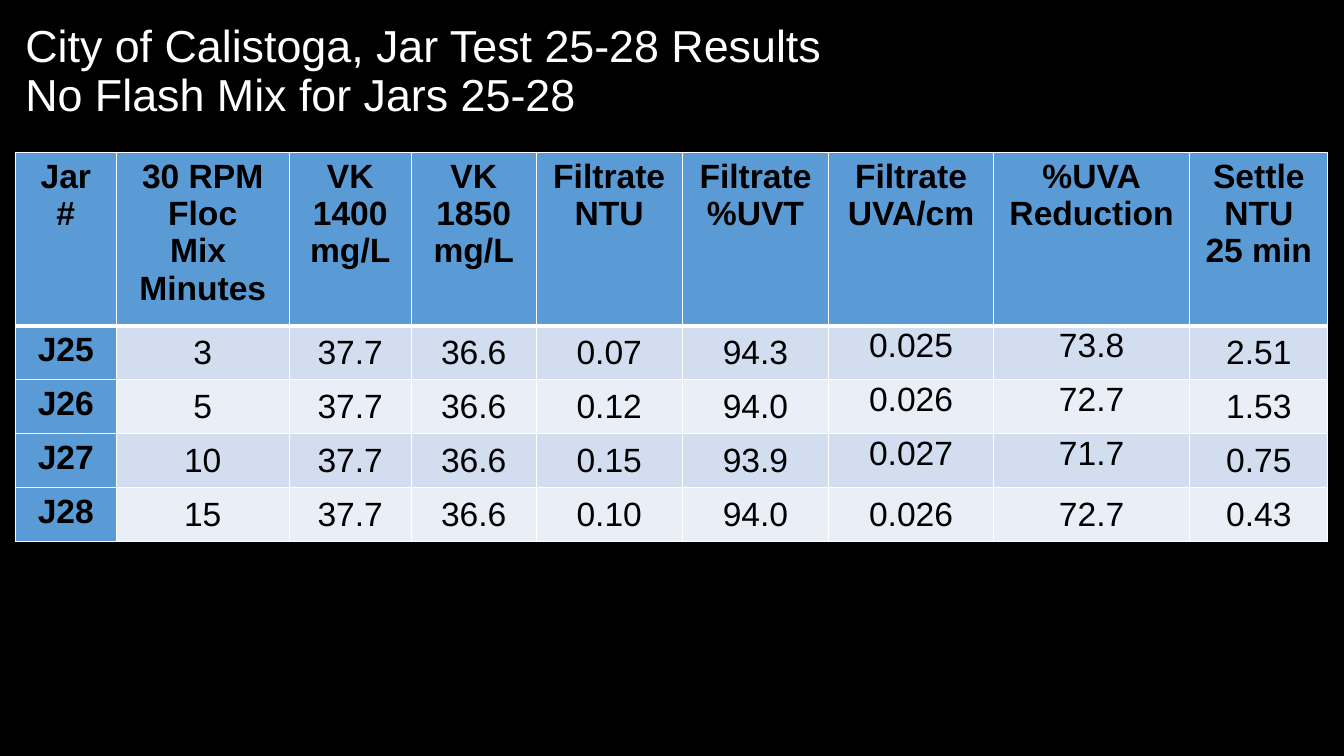
"""Build the jar test results slide with its table."""
from lxml import etree
from pptx import Presentation
from pptx.dml.color import RGBColor
from pptx.enum.text import MSO_ANCHOR, PP_ALIGN
from pptx.oxml.ns import qn
from pptx.util import Pt

TOP, MIDDLE = MSO_ANCHOR.TOP, MSO_ANCHOR.MIDDLE
LEFT, CENTER = PP_ALIGN.LEFT, PP_ALIGN.CENTER
BLUE, BANDS = "5B9BD5", ("D2DEEF", "EAEFF7")
WHITE, BLACK = "FFFFFF", "000000"

COL_WIDTHS = [72, 123.6, 87.2, 89.2, 104.4, 104.6, 117.6, 140.4, 98.4]
HEADER_HEIGHT, ROW_HEIGHT = 123.8, 38.5
ROWS = [
    ["Jar\n#", "30 RPM\nFloc\nMix \nMinutes", "VK\n1400\nmg/L", "VK\n1850\nmg/L",
     "Filtrate\nNTU", "Filtrate\n%UVT", "Filtrate\nUVA/cm", "%UVA\nReduction",
     "Settle\nNTU\n25 min"],
    ["J25", "3", "37.7", "36.6", "0.07", "94.3", "0.025", "73.8", "2.51"],
    ["J26", "5", "37.7", "36.6", "0.12", "94.0", "0.026", "72.7", "1.53"],
    ["J27", "10", "37.7", "36.6", "0.15", "93.9", "0.027", "71.7", "0.75"],
    ["J28", "15", "37.7", "36.6", "0.10", "94.0", "0.026", "72.7", "0.43"],
]


def rgb(value):
    return RGBColor.from_string(value)


def write(tf, text, size=24, color=BLACK, bold=False, align=CENTER, spacing=1.0):
    for i, line in enumerate(text.split("\n")):
        p = tf.paragraphs[0] if i == 0 else tf.add_paragraph()
        p.alignment, p.line_spacing = align, spacing
        r = p.add_run()
        r.text = line
        r.font.name, r.font.size, r.font.bold = "Arial", Pt(size), bold
        r.font.color.rgb = rgb(color)


prs = Presentation()
prs.slide_width, prs.slide_height = Pt(960), Pt(540)
s = prs.slides.add_slide(prs.slide_layouts[6])
s.background.fill.solid()
s.background.fill.fore_color.rgb = rgb(BLACK)

sp = s.shapes.add_textbox(Pt(11), Pt(9.2), Pt(937.4), Pt(85))
tf = sp.text_frame
tf.word_wrap = True
tf.vertical_anchor = MIDDLE
write(tf, "City of Calistoga, Jar Test 25-28 Results\nNo Flash Mix for Jars 25-28",
      size=32, color=WHITE, align=LEFT, spacing=0.9)

table = s.shapes.add_table(
    len(ROWS), len(COL_WIDTHS), Pt(11), Pt(109), Pt(sum(COL_WIDTHS)),
    Pt(HEADER_HEIGHT + ROW_HEIGHT * (len(ROWS) - 1))).table
table.first_col = True
for col, width in zip(table.columns, COL_WIDTHS):
    col.width = Pt(width)

for i, values in enumerate(ROWS):
    table.rows[i].height = Pt(ROW_HEIGHT if i else HEADER_HEIGHT)
    for j, value in enumerate(values):
        cell = table.cell(i, j)
        heading = i == 0 or j == 0
        write(cell.text_frame, value, bold=heading)
        if not heading:
            cell.margin_left = cell.margin_right = cell.margin_top = Pt(0.7)
            cell.margin_bottom = 0
        raised = j in (6, 7) and i < len(ROWS) - 1
        cell.vertical_anchor = TOP if heading or raised else MIDDLE
        widths = {"L": 1, "R": 1, "T": 3 if i == 1 else 1, "B": 1 if i else 3}
        for side, width in widths.items():
            ln = etree.SubElement(cell._tc.get_or_add_tcPr(), qn(f"a:ln{side}"), w=str(Pt(width)))
            fill = etree.SubElement(ln, qn("a:solidFill"))
            etree.SubElement(fill, qn("a:srgbClr"), val=WHITE)
        cell.fill.solid()
        cell.fill.fore_color.rgb = rgb(BLUE if heading else BANDS[(i - 1) % 2])

prs.save("out.pptx")
